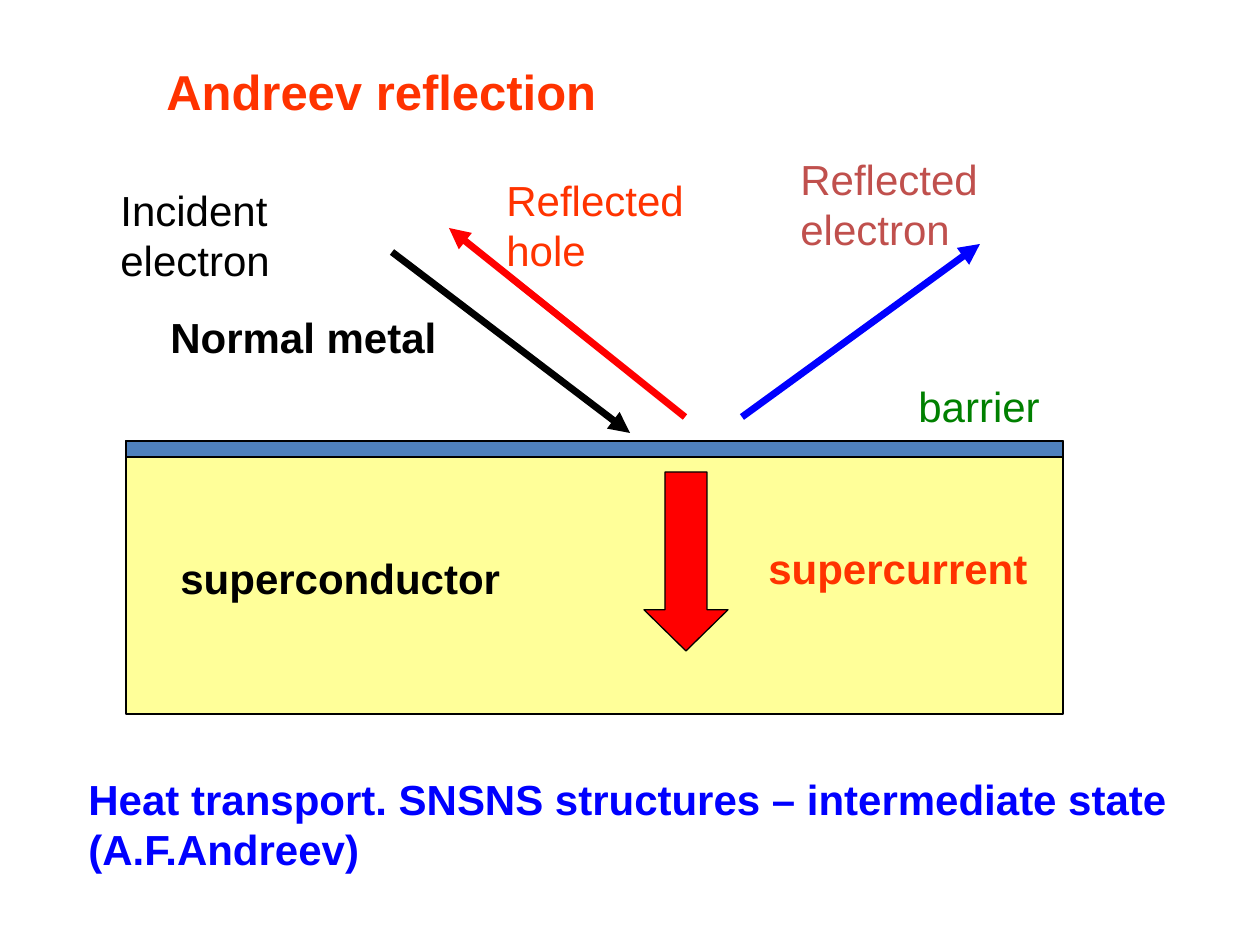
import pptx
import pptx.dml.color
import pptx.enum.shapes
import pptx.enum.text
import pptx.oxml.ns
import pptx.util
from lxml import etree

PX = 914400 / 126
FONT = "Arial"
COLORS = {
    "black": "000000",
    "orange": "FF3300",
    "red": "FF0000",
    "blue": "0000FF",
    "green": "008000",
    "brick": "C0504D",
    "barrier": "4F81BD",
    "superconductor": "FFFF99",
}
SHAPES = pptx.enum.shapes.MSO_SHAPE


def px(n):
    return pptx.util.Emu(round(n * PX))


def rgb(name):
    return pptx.dml.color.RGBColor.from_string(COLORS[name])


class Diagram:
    """Holds the style and the current slide, and draws each kind of element."""

    def __init__(self, slide, font=FONT, size=24, outline=0.75, ray=4):
        self.s = slide
        self.font = font
        self.size = size
        self.outline = outline
        self.ray = ray

    def label(self, text, x, y, w, h, color, bold=False, size=None, wrap=True):
        sp = self.s.shapes.add_textbox(px(x), px(y), px(w), px(h))
        tf = sp.text_frame
        tf.word_wrap = wrap
        tf.auto_size = pptx.enum.text.MSO_AUTO_SIZE.SHAPE_TO_FIT_TEXT
        p = tf.paragraphs[0]
        r = p.add_run()
        r.text = text
        r.font.name = self.font
        r.font.size = pptx.util.Pt(size or self.size)
        r.font.bold = bold
        r.font.color.rgb = rgb(color)

    def block(self, kind, x, y, w, h, fill):
        sp = self.s.shapes.add_shape(kind, px(x), px(y), px(w), px(h))
        sp.shadow.inherit = False
        sp.fill.solid()
        sp.fill.fore_color.rgb = rgb(fill)
        sp.line.color.rgb = rgb("black")
        sp.line.width = pptx.util.Pt(self.outline)
        return sp

    def arrow(self, x1, y1, x2, y2, color):
        straight = pptx.enum.shapes.MSO_CONNECTOR.STRAIGHT
        sp = self.s.shapes.add_connector(straight, px(x1), px(y1), px(x2), px(y2))
        sp.line.color.rgb = rgb(color)
        sp.line.width = pptx.util.Pt(self.ray)
        qn = pptx.oxml.ns.qn
        etree.SubElement(sp.line._get_or_add_ln(), qn("a:tailEnd"), type="triangle")
        etree.SubElement(sp._element.spPr, qn("a:effectLst"))


def main():
    prs = pptx.Presentation()
    prs.slide_width = px(1260)
    prs.slide_height = px(945)
    d = Diagram(prs.slides.add_slide(prs.slide_layouts[6]))

    left, top, width = 126, 441, 937
    d.label("Andreev reflection", 154, 55, 486, 72, "orange", bold=True, size=28)
    d.block(SHAPES.RECTANGLE, left, top, width, 273, "superconductor")
    d.label("superconductor", 168, 546, 348, 63, "black", bold=True, wrap=False)
    d.label("Normal metal", 158, 305, 328, 63, "black", bold=True)

    d.arrow(392, 252, 630, 433, "black")
    d.label("Incident electron", 108, 178, 286, 115, "black")
    d.arrow(685, 417, 449, 228, "red")
    d.arrow(742, 417, 980, 244, "blue")

    d.block(SHAPES.RECTANGLE, left, top, width, 16, "barrier")
    d.label("barrier", 906, 374, 149, 63, "green", wrap=False)
    d.label("Reflected hole", 494, 168, 232, 115, "orange")
    d.label("Reflected electron", 788, 147, 258, 115, "brick")

    current = d.block(SHAPES.DOWN_ARROW, 644, 472, 84, 179, "red")
    current.adjustments[0] = 0.5
    current.adjustments[1] = 0.49
    d.label("supercurrent", 756, 536, 287, 63, "orange", bold=True, wrap=False)
    d.label("Heat transport. SNSNS structures – intermediate state (A.F.Andreev)",
            76, 767, 1129, 115, "blue", bold=True)

    prs.save("out.pptx")


if __name__ == "__main__":
    main()
